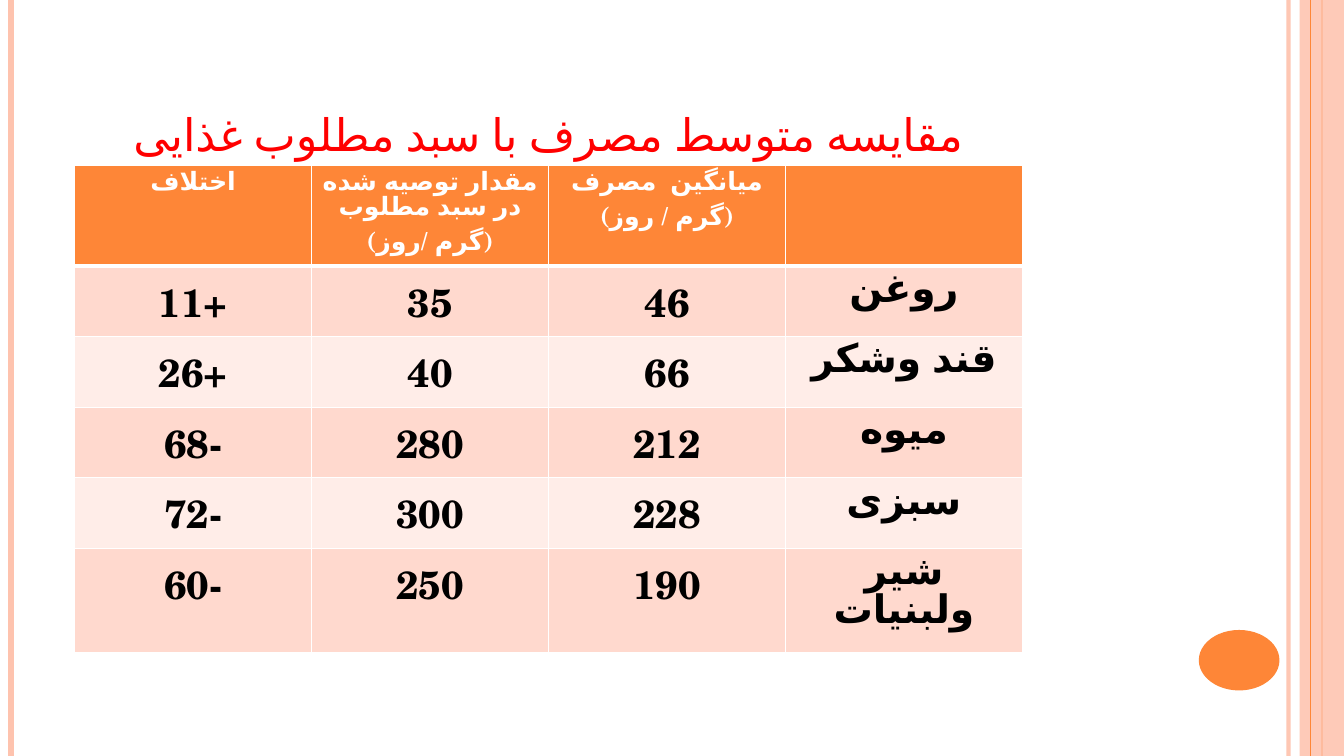
from lxml import etree
from pptx import Presentation
from pptx import util as u
from pptx.dml.color import RGBColor
from pptx.enum import lang, shapes, text
from pptx.oxml.ns import qn

PX = 9144  # 100 px to the inch
WIDTH, HEIGHT = 1333, 750
FONT = "TeX Gyre Schola"
ORANGE, PEACH, WHITE = "FE8637", "FEC3AE", "FFFFFF"
BANDS = ("FFD9CE", "FFEDE8")

HEADER = ["اختلاف", "مقدار توصیه شده در سبد مطلوب\n(گرم /روز)",
          "میانگین  مصرف\n(گرم / روز)", ""]
FOODS = [
    ["11+", "35", "46", "روغن"],
    ["26+", "40", "66", "قند وشکر"],
    ["68-", "280", "212", "میوه"],
    ["72-", "300", "228", "سبزی"],
    ["60-", "250", "190", "شیر ولبنیات"],
]
ROW_HEIGHTS = [96, 70, 70, 70, 70, 87]


def px(length):
    return u.Emu(length * PX)


def color(value):
    return RGBColor.from_string(value)


def set_fill(target, value):
    target.fill.solid()
    target.fill.fore_color.rgb = color(value)


def set_alpha(shape, percent):
    """Make the first colour of a shape or line partly transparent."""
    rgb = next(shape._element.spPr.iter(qn("a:srgbClr")))
    etree.SubElement(rgb, qn("a:alpha"), val=str(percent * 1000))


def style_text(frame, size, value, bold=False):
    for paragraph in frame.paragraphs:
        paragraph.alignment = text.PP_ALIGN.CENTER
        font = paragraph.font
        font.name, font.size, font.bold = FONT, u.Pt(size), bold
        font.color.rgb = color(value)
        for run in paragraph.runs:
            run.font.language_id = lang.MSO_LANGUAGE_ID.FARSI


def add_vertical_line(slide, x, value, weight):
    line = slide.shapes.add_connector(
        shapes.MSO_CONNECTOR.STRAIGHT, px(x), 0, px(x), px(HEIGHT))
    line.line.color.rgb = color(value)
    line.line.width = u.Pt(weight)
    etree.SubElement(line._element.spPr, qn("a:effectLst"))
    return line


def add_plain_shape(slide, kind, left, top, width, height, value):
    shape = slide.shapes.add_shape(
        kind, px(left), px(top), px(width), px(height))
    shape.shadow.inherit = False
    set_fill(shape, value)
    shape.line.fill.background()
    return shape


def add_frame(slide):
    """Side stripes and the round page marker."""
    set_alpha(add_vertical_line(slide, WIDTH - 55, PEACH, 3), 93)
    add_vertical_line(slide, 11, PEACH, 4.5)
    add_vertical_line(slide, WIDTH - 22, ORANGE, 1.5)
    band = add_plain_shape(slide, shapes.MSO_SHAPE.RECTANGLE,
                           WIDTH - 44, 0, 44, HEIGHT, PEACH)
    set_alpha(band, 87)
    add_vertical_line(slide, WIDTH - 33, ORANGE, 0.75)
    add_plain_shape(slide, shapes.MSO_SHAPE.OVAL,
                    WIDTH - 144, 625, 80, 60, ORANGE)


def add_title(slide, left, top, width, height):
    box = slide.shapes.add_textbox(px(left), px(top), px(width), px(height))
    frame = box.text_frame
    frame.word_wrap = True
    frame.vertical_anchor = text.MSO_ANCHOR.BOTTOM
    frame.text = "مقایسه متوسط مصرف با سبد مطلوب غذایی"
    style_text(frame, 32, "FF0000")


def set_borders(cell, weights):
    """Draw white borders; weights maps each side's tag to points."""
    properties = cell._tc.get_or_add_tcPr()
    for index, (side, weight) in enumerate(weights.items()):
        line = etree.Element(qn(f"a:{side}"), w=str(u.Pt(weight)))
        solid = etree.SubElement(line, qn("a:solidFill"))
        etree.SubElement(solid, qn("a:srgbClr"), val=WHITE)
        properties.insert(index, line)


def add_food_table(slide, left, top, width):
    rows = [HEADER] + FOODS
    table = slide.shapes.add_table(
        len(rows), len(HEADER), px(left), px(top), px(width),
        px(sum(ROW_HEIGHTS))).table
    for row, height in zip(table.rows, ROW_HEIGHTS):
        row.height = px(height)
    for row_index, values in enumerate(rows):
        is_header = row_index == 0
        for column_index, value in enumerate(values):
            cell = table.cell(row_index, column_index)
            cell.margin_left = cell.margin_right = px(8)
            cell.margin_top = cell.margin_bottom = px(5)
            cell.text = value
            style_text(cell.text_frame, 18 if is_header else 28,
                       WHITE if is_header else "000000", bold=True)
            set_fill(cell, ORANGE if is_header else BANDS[(row_index - 1) % 2])
            set_borders(cell, {"lnL": 1, "lnR": 1, "lnB": 3 if is_header else 1})


def main():
    presentation = Presentation()
    presentation.slide_width, presentation.slide_height = px(WIDTH), px(HEIGHT)
    slide = presentation.slides.add_slide(presentation.slide_layouts[6])
    add_frame(slide)
    add_title(slide, 74, 67, 940, 97)
    add_food_table(slide, 74, 164, 940)
    presentation.save("out.pptx")


if __name__ == "__main__":
    main()
